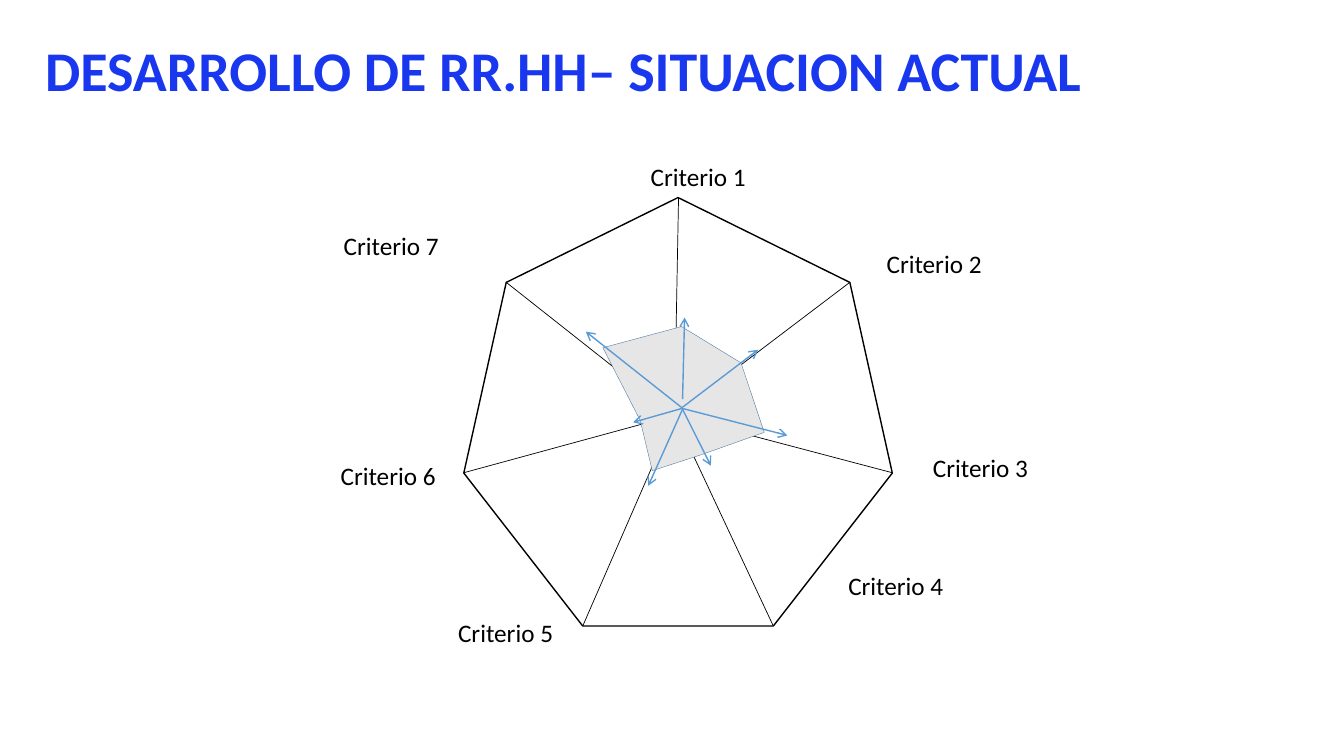
import pptx
import pptx.dml.color
import pptx.enum.shapes
import pptx.enum.text
import pptx.oxml.ns
import pptx.oxml.xmlchemy
import pptx.util

EMU_PER_PX = 9144  # 100 px to the inch


def px(length):
    return pptx.util.Emu(length * EMU_PER_PX)


def colour(hex_text):
    return pptx.dml.color.RGBColor.from_string(hex_text)


class SlideBuilder:
    font = "Calibri"
    title_colour = "1937EE"
    ink = "000000"
    arrow_colour = "5B9BD5"
    area_fill = "E7E6E6"
    area_line = "43739E"

    def __init__(self, page):
        self.page = page

    def text(self, frame, words, size, hex_text, bold=False, centred=False, spacing=None):
        box = self.page.shapes.add_textbox(*map(px, frame))
        box.text_frame.word_wrap = True
        para = box.text_frame.paragraphs[0]
        if centred:
            para.alignment = pptx.enum.text.PP_ALIGN.CENTER
        if spacing:
            para.line_spacing = pptx.util.Pt(spacing)
        span = para.add_run()
        span.text = words
        span.font.name = self.font
        span.font.size = pptx.util.Pt(size)
        span.font.bold = bold
        span.font.color.rgb = colour(hex_text)

    def stroke(self, item, hex_text, width):
        item.line.color.rgb = colour(hex_text)
        item.line.width = pptx.util.Pt(width)

    def heptagon(self, frame):
        kind = pptx.enum.shapes.MSO_SHAPE.HEPTAGON
        shape = self.page.shapes.add_shape(kind, *map(px, frame))
        shape.shadow.inherit = False
        shape.fill.background()
        self.stroke(shape, self.ink, 1)

    def area(self, points):
        builder = self.page.shapes.build_freeform(*points[0], scale=EMU_PER_PX)
        builder.add_line_segments(points[1:], close=True)
        shape = builder.convert_to_shape()
        shape.shadow.inherit = False
        shape.fill.solid()
        shape.fill.fore_color.rgb = colour(self.area_fill)
        self.stroke(shape, self.area_line, 0.25)

    def line(self, start, end, hex_text, width, arrow=False):
        kind = pptx.enum.shapes.MSO_CONNECTOR.STRAIGHT
        connector = self.page.shapes.add_connector(kind, *map(px, start + end))
        self.stroke(connector, hex_text, width)
        properties = connector._element.spPr
        if arrow:
            head = pptx.oxml.xmlchemy.OxmlElement("a:tailEnd")
            head.set("type", "arrow")
            properties.find(pptx.oxml.ns.qn("a:ln")).append(head)
        properties.append(pptx.oxml.xmlchemy.OxmlElement("a:effectLst"))


LABEL_HEIGHT = 40
SPOKE_CENTRE = (669, 412)

# Criterion number: label left, top and width
LABELS = {
    1: (623, 155, 139),
    2: (850, 241, 153),
    3: (897, 444, 151),
    4: (795, 561, 187),
    5: (411, 608, 181),
    6: (302, 452, 166),
    7: (306, 224, 164),
}
# Clockwise from the top, one entry per criterion
CORNERS = [(673, 196), (843, 280), (885, 469), (767, 621), (578, 621), (460, 469), (502, 280)]
SCORES = [(676, 324), (735, 360), (758, 429), (696, 451), (647, 467), (635, 417), (598, 345)]
ARROWS = [
    ((677, 396), (679, 315)),
    ((677, 404), (752, 347)),
    ((676, 405), (781, 432)),
    ((677, 406), (705, 462)),
    ((677, 406), (643, 482)),
    ((677, 405), (628, 419)),
    ((677, 405), (581, 329)),
]


def main():
    deck = pptx.Presentation()
    deck.slide_width, deck.slide_height = px(1333), px(750)
    slide = SlideBuilder(deck.slides.add_slide(deck.slide_layouts[6]))

    # Title
    slide.text((35, 41, 1279, 66), "DESARROLLO DE RR.HH– SITUACION ACTUAL", 40,
               slide.title_colour, bold=True, spacing=40)

    # Criterion labels
    for number, (left, top, width) in LABELS.items():
        slide.text((left, top, width, LABEL_HEIGHT), f"Criterio {number}", 18,
                   slide.ink, centred=True)

    # Radar frame and spokes
    slide.heptagon((460, 196, 425, 425))
    for corner in CORNERS:
        slide.line(SPOKE_CENTRE, corner, slide.ink, 0.5)

    # Current situation and growth arrows
    slide.area(SCORES)
    for start, end in ARROWS:
        slide.line(start, end, slide.arrow_colour, 1, arrow=True)

    deck.save("out.pptx")


if __name__ == "__main__":
    main()
